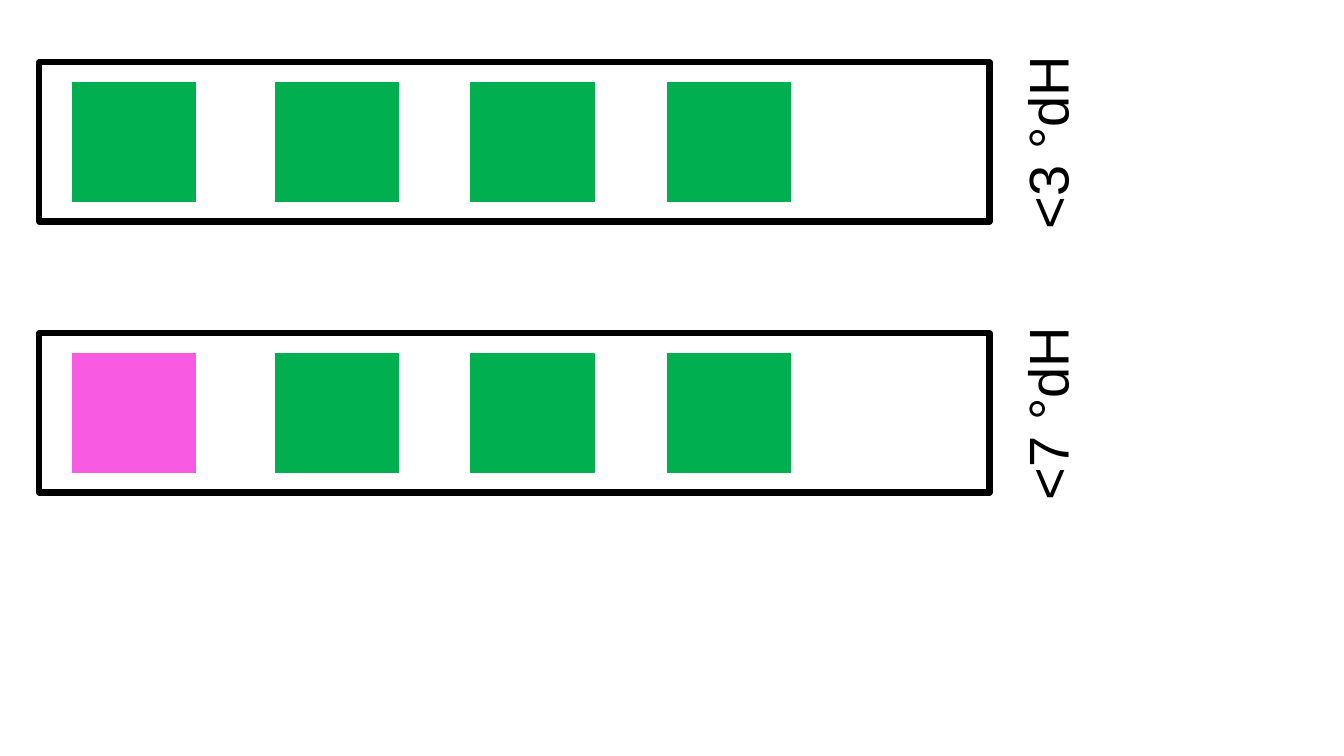
from dataclasses import dataclass

from pptx import Presentation
from pptx.dml.color import RGBColor
from pptx.enum.shapes import MSO_SHAPE
from pptx.enum.text import MSO_AUTO_SIZE
from pptx.util import Cm, Pt

RECTANGLE = MSO_SHAPE.RECTANGLE
FIT_SHAPE = MSO_AUTO_SIZE.SHAPE_TO_FIT_TEXT
BLANK_LAYOUT = 6

STRIPS = [
    ("<3 °dH", ("green", "green", "green", "green")),
    ("<7 °dH", ("pink", "green", "green", "green")),
]


@dataclass(frozen=True)
class Theme:
    green: RGBColor = RGBColor(0x00, 0xB0, 0x50)
    pink: RGBColor = RGBColor(0xF8, 0x5A, 0xE1)
    black: RGBColor = RGBColor(0x00, 0x00, 0x00)
    font: str = "Arial"
    label_size: Pt = Pt(40)
    frame_line: Pt = Pt(4.5)
    pad_line: Pt = Pt(1)


THEME = Theme()

STRIP_LEFT, STRIP_TOP = 0.99, 1.57
STRIP_WIDTH, STRIP_HEIGHT = 23.95, 4.01
STRIP_PITCH = 6.83
PAD_LEFTS = (1.83, 6.95, 11.87, 16.83)
PAD_WIDTH, PAD_HEIGHT = 3.1, 3
LABEL_LEFT, LABEL_OFFSET = 23.57, 0.67
LABEL_WIDTH, LABEL_HEIGHT = 5.61, 1.96


def add_rectangle(slide, left, top, width, height, line_color, line_width, fill=None):
    shape = slide.shapes.add_shape(RECTANGLE, Cm(left), Cm(top), Cm(width), Cm(height))
    shape.shadow.inherit = False
    if fill is None:
        shape.fill.background()
    else:
        shape.fill.solid()
        shape.fill.fore_color.rgb = fill
    shape.line.color.rgb = line_color
    shape.line.width = line_width


def add_label(slide, text, top):
    label = slide.shapes.add_textbox(
        Cm(LABEL_LEFT), Cm(top), Cm(LABEL_WIDTH), Cm(LABEL_HEIGHT)
    )
    label.rotation = 270
    label.text_frame.word_wrap = True
    label.text_frame.auto_size = FIT_SHAPE
    run = label.text_frame.paragraphs[0].add_run()
    run.text = text
    run.font.name = THEME.font
    run.font.size = THEME.label_size
    run.font.color.rgb = THEME.black


def add_strip(slide, top, text, pad_colors):
    add_rectangle(
        slide, STRIP_LEFT, top, STRIP_WIDTH, STRIP_HEIGHT, THEME.black, THEME.frame_line
    )
    pad_top = top + (STRIP_HEIGHT - PAD_HEIGHT) / 2
    for left, color_name in zip(PAD_LEFTS, pad_colors):
        color = getattr(THEME, color_name)
        add_rectangle(
            slide, left, pad_top, PAD_WIDTH, PAD_HEIGHT, color, THEME.pad_line, color
        )
    add_label(slide, text, top + LABEL_OFFSET)


def main():
    presentation = Presentation()
    presentation.slide_width = Cm(33.87)
    presentation.slide_height = Cm(19.05)
    slide = presentation.slides.add_slide(presentation.slide_layouts[BLANK_LAYOUT])
    for index, (text, pad_colors) in enumerate(STRIPS):
        add_strip(slide, STRIP_TOP + index * STRIP_PITCH, text, pad_colors)
    presentation.save("out.pptx")


if __name__ == "__main__":
    main()
